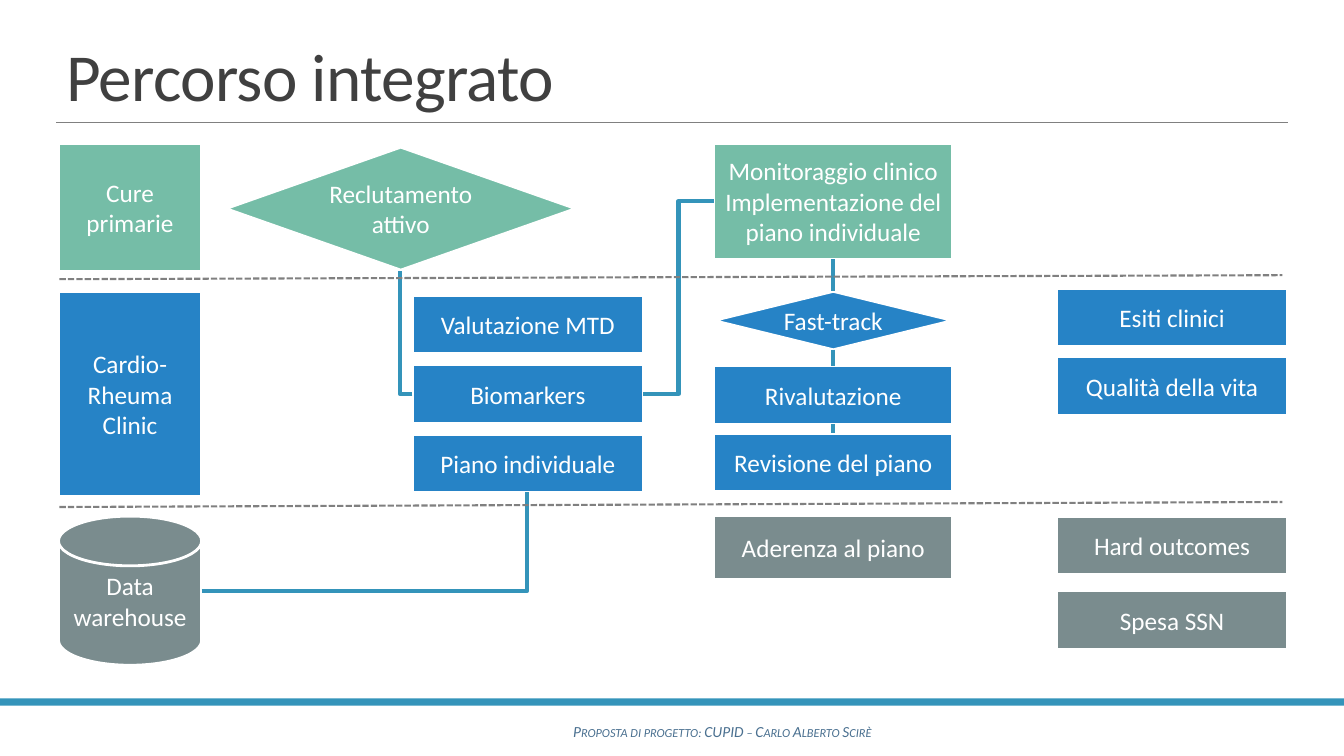
from lxml import etree
from pptx import Presentation
from pptx.dml.color import RGBColor
from pptx.enum.dml import MSO_LINE
from pptx.enum.shapes import MSO_CONNECTOR, MSO_SHAPE
from pptx.enum.text import MSO_ANCHOR, PP_ALIGN
from pptx.oxml.ns import qn
from pptx.util import Inches, Pt

RECTANGLE = MSO_SHAPE.RECTANGLE
DECISION = MSO_SHAPE.FLOWCHART_DECISION
DISK = MSO_SHAPE.FLOWCHART_MAGNETIC_DISK
STRAIGHT, ELBOW = MSO_CONNECTOR.STRAIGHT, MSO_CONNECTOR.ELBOW
TOP, MIDDLE, BOTTOM = MSO_ANCHOR.TOP, MSO_ANCHOR.MIDDLE, MSO_ANCHOR.BOTTOM
LEFT, CENTER = PP_ALIGN.LEFT, PP_ALIGN.CENTER
SIDE_TOP, SIDE_LEFT, SIDE_BOTTOM, SIDE_RIGHT = range(4)

FONT = "Calibri"
COLORS = {
    "primary care": "75BDA7", "clinic": "2683C6", "data": "7A8C8E",
    "flow": "3494BA", "rule": "808080", "title": "404040",
    "footer": "4A7090", "white": "FFFFFF",
}
TITLE = "Percorso integrato"
FOOTER = "Proposta di progetto: CUPID – Carlo Alberto Scirè"

# Column: (left, usual width)
COLUMNS = {
    "lane": (0.58, 1.42), "recruit": (2.24, 3.47), "visit": (4.09, 2.29),
    "follow": (7.08, 2.37), "outcome": (10.48, 2.29),
}
# (column, top, height, colour, shape, paragraphs)
STEPS = [
    ("lane", 1.42, 1.27, "primary care", RECTANGLE, ["Cure primarie"]),
    ("lane", 2.89, 2.04, "clinic", RECTANGLE, ["Cardio-Rheuma Clinic"]),
    ("lane", 5.12, 1.48, "data", DISK, ["Data warehouse"]),
    ("recruit", 1.46, 1.22, "primary care", DECISION, ["Reclutamento attivo"]),
    ("visit", 2.93, 0.58, "clinic", RECTANGLE, ["Valutazione MTD"]),
    ("visit", 3.62, 0.58, "clinic", RECTANGLE, ["Biomarkers"]),
    ("visit", 4.31, 0.58, "clinic", RECTANGLE, ["Piano individuale"]),
    ("follow", 1.42, 1.15, "primary care", RECTANGLE,
     ["Monitoraggio clinico", "Implementazione del piano individuale"]),
    ("follow", 2.89, 0.58, "clinic", DECISION, ["Fast-track"]),
    ("follow", 3.63, 0.58, "clinic", RECTANGLE, ["Rivalutazione"]),
    ("follow", 4.3, 0.58, "clinic", RECTANGLE, ["Revisione del piano"]),
    ("follow", 5.12, 0.63, "data", RECTANGLE, ["Aderenza al piano"]),
    ("outcome", 2.86, 0.58, "clinic", RECTANGLE, ["Esiti clinici"]),
    ("outcome", 3.54, 0.58, "clinic", RECTANGLE, ["Qualità della vita"]),
    ("outcome", 5.12, 0.58, "data", RECTANGLE, ["Hard outcomes"]),
    ("outcome", 5.86, 0.58, "data", RECTANGLE, ["Spesa SSN"]),
]
FOLLOW_UP = ["Monitoraggio clinico", "Fast-track", "Rivalutazione", "Revisione del piano"]
DIVIDERS = [((0.59, 2.77), (12.72, 2.73)), ((0.59, 5.03), (12.72, 4.98))]
# One-bend links, horizontal leg first
CORNER_LINKS = [((4.09, 3.91), (3.97, 2.69)), ((2, 5.86), (5.23, 4.88))]


def add_line(slide, start, end, color, width, kind=STRAIGHT):
    connector = slide.shapes.add_connector(kind, *map(Inches, (*start, *end)))
    connector.line.color.rgb = RGBColor.from_string(COLORS[color])
    connector.line.width = Pt(width)
    properties = connector.line._get_or_add_ln().getparent()
    etree.SubElement(properties, qn("a:effectLst"))
    return connector


def make_one_bend(connector):
    """Turn a two-bend elbow into a horizontal leg followed by a vertical one."""
    connector._element.spPr.find(qn("a:prstGeom")).set("prst", "bentConnector2")


def write(shape, paragraphs, size, color, anchor=MIDDLE, alignment=CENTER):
    frame = shape.text_frame
    frame.word_wrap = True
    frame.vertical_anchor = anchor
    for index, text in enumerate(paragraphs):
        paragraph = frame.add_paragraph() if index else frame.paragraphs[0]
        paragraph.alignment = alignment
        run = paragraph.add_run()
        run.text = text
        run.font.name = FONT
        run.font.size = Pt(size)
        run.font.color.rgb = RGBColor.from_string(COLORS[color])
    return frame.paragraphs[0]


def add_filled(slide, kind, box, color):
    shape = slide.shapes.add_shape(kind, *map(Inches, box))
    shape.shadow.inherit = False
    shape.fill.solid()
    shape.fill.fore_color.rgb = RGBColor.from_string(COLORS[color])
    shape.line.fill.background()
    return shape


def add_step(slide, column, top, height, color, kind, paragraphs):
    left, width = COLUMNS[column]
    shape = add_filled(slide, kind, (left, top, width, height), color)
    shape.line.color.rgb = RGBColor.from_string(COLORS["white"])
    shape.line.width = Pt(2)
    write(shape, paragraphs, 18, "white", TOP if kind == DISK else MIDDLE)
    return shape


def add_frame(slide):
    """Title, rule, footer band and footer text."""
    add_filled(slide, RECTANGLE, (0, 6.93, 13.33, 0.07), "flow")
    add_line(slide, (0.56, 1.21), (12.77, 1.21), "rule", 0.5)
    title = slide.shapes.add_textbox(*map(Inches, (0.56, 0.31, 12.21, 0.88)))
    paragraph = write(title, [TITLE], 48, "title", BOTTOM, LEFT)
    paragraph.line_spacing = 0.85
    paragraph.runs[0].font._element.set("spc", "-50")
    footer = slide.shapes.add_textbox(*map(Inches, (2.58, 7.11, 9.17, 0.29)))
    font = write(footer, [FOOTER], 11, "footer").runs[0].font
    font.italic = True
    font._element.set("cap", "small")


def main():
    presentation = Presentation()
    presentation.slide_width, presentation.slide_height = Inches(13.33), Inches(7.5)
    slide = presentation.slides.add_slide(presentation.slide_layouts[6])
    add_frame(slide)

    steps = {step[-1][0]: add_step(slide, *step) for step in STEPS}

    links = [(upper, SIDE_BOTTOM, lower, SIDE_TOP, STRAIGHT)
             for upper, lower in zip(FOLLOW_UP, FOLLOW_UP[1:])]
    links.append(("Biomarkers", SIDE_RIGHT, "Monitoraggio clinico", SIDE_LEFT, ELBOW))
    for source, source_side, target, target_side, kind in links:
        connector = add_line(slide, (0, 0), (1, 1), "flow", 3, kind)
        connector.begin_connect(steps[source], source_side)
        connector.end_connect(steps[target], target_side)
    for start, end in CORNER_LINKS:
        make_one_bend(add_line(slide, start, end, "flow", 3, ELBOW))
    for start, end in DIVIDERS:
        divider = add_line(slide, start, end, "rule", 1.5)
        divider.line.dash_style = MSO_LINE.SQUARE_DOT

    presentation.save("out.pptx")


if __name__ == "__main__":
    main()
